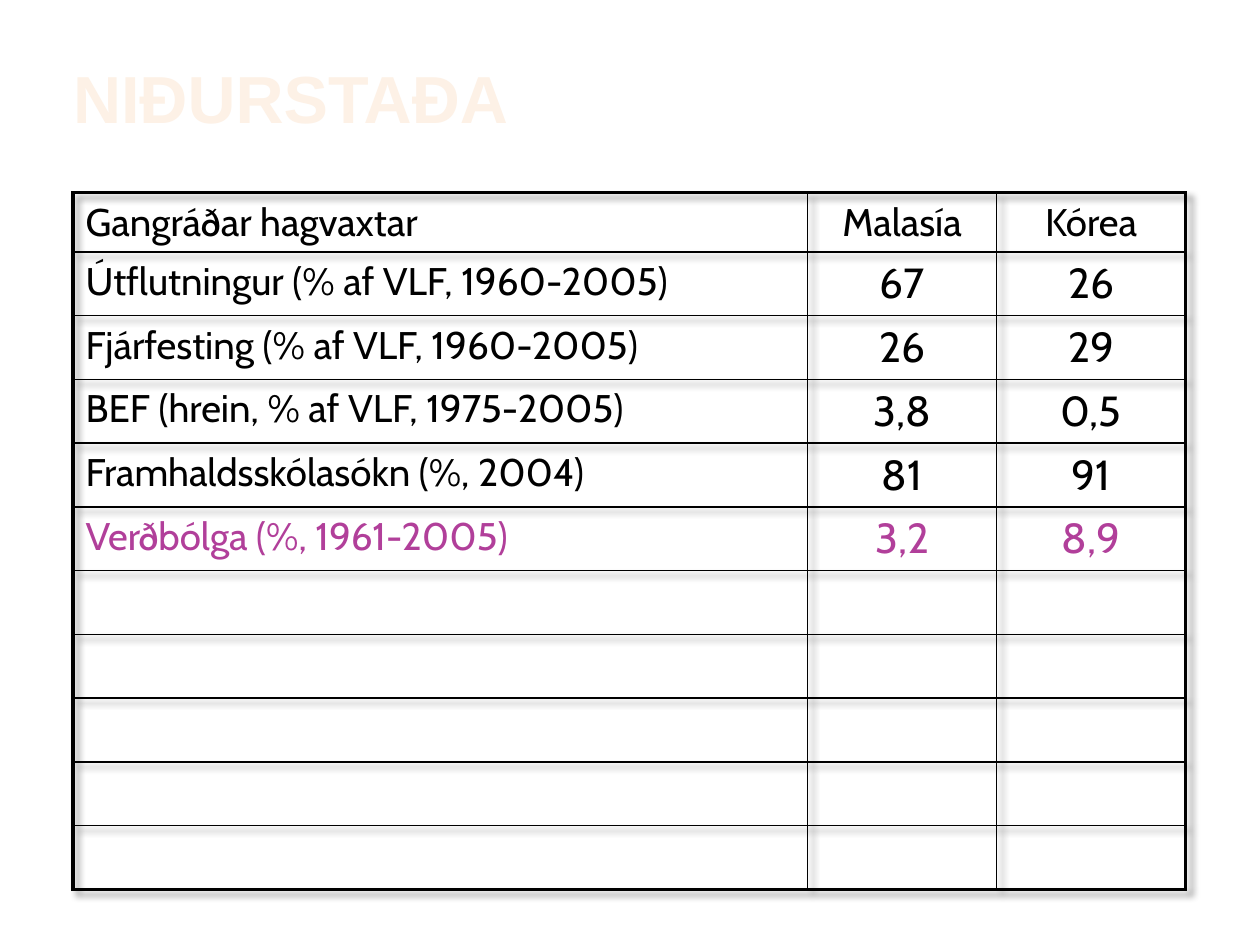
from dataclasses import dataclass

from lxml.etree import SubElement as Sub
from pptx import Presentation
from pptx.dml.color import RGBColor as Rgb
from pptx.enum.text import MSO_ANCHOR as Anchor, PP_ALIGN as Align
from pptx.oxml import parse_xml
from pptx.oxml.ns import qn
from pptx.util import Inches, Pt


@dataclass(frozen=True)
class Theme:
    ink: str = "000000"
    accent: str = "B13F9A"
    pale: str = "FDF1E6"
    face: str = "Cabin"
    head: str = "Arial"
    title: float = 38
    label: float = 22
    value: float = 24
    thin: float = 1
    thick: float = 2.25


@dataclass(frozen=True)
class Row:
    label: str = ""
    left: str = ""
    right: str = ""
    color: str = Theme.ink
    size: float = Theme.value


LOOK = Theme()
WIDE, HIGH = Inches(10), Inches(7.5)
EDGE = 0.058
COLS = (0.583, 0.15, 0.15)
HEAD, BODY = Inches(0.47), Inches(0.506)
ROWS = [
    Row("Gangráðar hagvaxtar", "Malasía", "Kórea", size=LOOK.label),
    Row("Útflutningur (% af VLF, 1960-2005)", "67", "26"),
    Row("Fjárfesting (% af VLF, 1960-2005)", "26", "29"),
    Row("BEF (hrein, % af VLF, 1975-2005)", "3,8", "0,5"),
    Row("Framhaldsskólasókn (%, 2004)", "81", "91"),
    Row("Verðbólga (%, 1961-2005)", "3,2", "8,9", LOOK.accent),
] + [Row()] * 5
SHADE = (
    '<a:effectLst xmlns:a="http://schemas.openxmlformats.org/drawingml/2006/main">'
    '<a:outerShdw blurRad="50800" dist="50800" dir="2700000" algn="tl">'
    '<a:srgbClr val="000000"><a:alpha val="40000"/></a:srgbClr>'
    "</a:outerShdw></a:effectLst>"
)


def write(frame, text: str, *, size: float, color: str = LOOK.ink,
          face: str = LOOK.face, bold: bool = False, align=Align.LEFT) -> None:
    para = frame.paragraphs[0]
    para.alignment = align
    run = para.add_run()
    run.text = text
    font = run.font
    font.name, font.size, font.bold = face, Pt(size), bold
    font.color.rgb = Rgb.from_string(color)


def rule(cell, sides: dict[str, float]) -> None:
    props = cell._tc.get_or_add_tcPr()
    for spot, (side, width) in enumerate(sides.items()):
        line = Sub(props, qn(f"a:ln{side}"), w=str(Pt(width)))
        fill = Sub(line, qn("a:solidFill"))
        Sub(fill, qn("a:srgbClr"), val=LOOK.ink)
        props.insert(spot, line)


def title(slide, text: str) -> None:
    box = slide.shapes.add_textbox(
        int(WIDE * EDGE), int(HIGH * 0.06), int(WIDE * 0.88), int(HIGH * 0.08))
    frame = box.text_frame
    frame.word_wrap = True
    frame.margin_left = frame.margin_right = 0
    frame.margin_top = frame.margin_bottom = 0
    write(frame, text, size=LOOK.title, color=LOOK.pale, face=LOOK.head, bold=True)


def grid(slide, rows: list[Row]) -> None:
    last, end = len(rows) - 1, len(COLS) - 1
    table = slide.shapes.add_table(
        len(rows), len(COLS), int(WIDE * EDGE), int(HIGH * 0.204),
        int(WIDE * sum(COLS)), HEAD + BODY * last).table
    table.first_row = table.horz_banding = False
    table._tbl.tblPr.insert(0, parse_xml(SHADE))
    for col, share in zip(table.columns, COLS):
        col.width = int(WIDE * share)

    for r, row in enumerate(rows):
        table.rows[r].height = BODY if r else HEAD
        for c, text in enumerate((row.label, row.left, row.right)):
            cell = table.cell(r, c)
            cell.fill.background()
            cell.vertical_anchor = Anchor.TOP
            outer = {"L": c == 0, "R": c == end, "T": r == 0, "B": r == last}
            rule(cell, {side: LOOK.thick if out else LOOK.thin
                        for side, out in outer.items()})
            if text:
                write(cell.text_frame, text, color=row.color,
                      size=row.size if c else LOOK.label,
                      align=Align.CENTER if c else Align.LEFT)


def main() -> None:
    deck = Presentation()
    deck.slide_width, deck.slide_height = WIDE, HIGH
    slide = deck.slides.add_slide(deck.slide_layouts[6])
    title(slide, "NIÐURSTAÐA")
    grid(slide, ROWS)
    deck.save("out.pptx")


if __name__ == "__main__":
    main()
